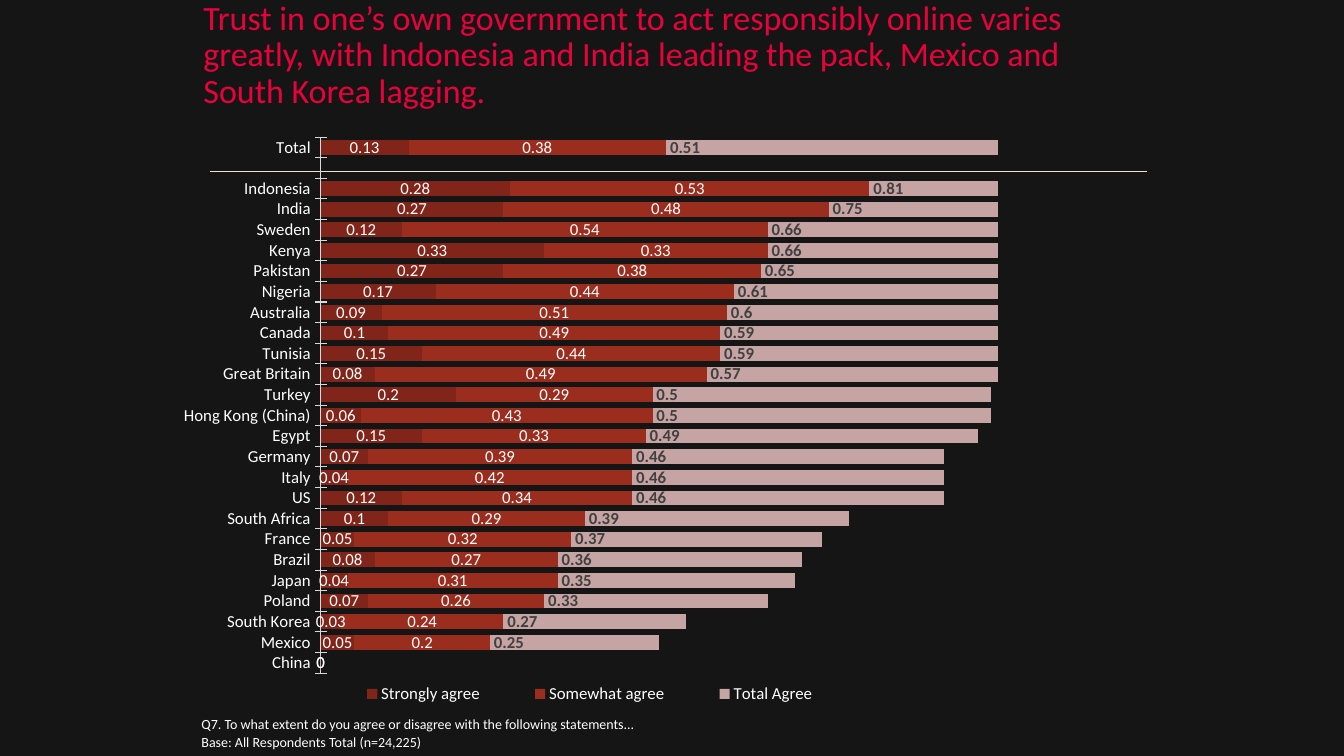
from dataclasses import dataclass

from lxml import etree
from pptx import Presentation
from pptx.chart.data import CategoryChartData
from pptx.dml.color import RGBColor
from pptx.enum.chart import (XL_CHART_TYPE, XL_LABEL_POSITION, XL_LEGEND_POSITION,
                             XL_TICK_LABEL_POSITION, XL_TICK_MARK)
from pptx.enum.shapes import MSO_CONNECTOR
from pptx.enum.text import MSO_ANCHOR
from pptx.oxml.ns import qn
from pptx.util import Inches, Pt

BAR_STACKED = XL_CHART_TYPE.BAR_STACKED
INSIDE_BASE = XL_LABEL_POSITION.INSIDE_BASE
LEGEND_BOTTOM = XL_LEGEND_POSITION.BOTTOM
LABELS_LOW = XL_TICK_LABEL_POSITION.LOW
CROSS, NO_TICK = XL_TICK_MARK.CROSS, XL_TICK_MARK.NONE
STRAIGHT = MSO_CONNECTOR.STRAIGHT
BOTTOM, MIDDLE = MSO_ANCHOR.BOTTOM, MSO_ANCHOR.MIDDLE

TITLE = ("Trust in one’s own government to act responsibly online varies greatly, "
         "with Indonesia and India leading the pack, Mexico and South Korea lagging.")
FOOTNOTES = [
    "Q7. To what extent do you agree or disagree with the following statements...",
    "Base: All Respondents Total (n=24,225)",
]
SERIES = ["Strongly agree", "Somewhat agree", "Total Agree"]
TRUST = [
    ("Total", 0.13, 0.38, 0.51),
    ("", None, None, None),
    ("Indonesia", 0.28, 0.53, 0.81),
    ("India", 0.27, 0.48, 0.75),
    ("Sweden", 0.12, 0.54, 0.66),
    ("Kenya", 0.33, 0.33, 0.66),
    ("Pakistan", 0.27, 0.38, 0.65),
    ("Nigeria", 0.17, 0.44, 0.61),
    ("Australia", 0.09, 0.51, 0.6),
    ("Canada", 0.1, 0.49, 0.59),
    ("Tunisia", 0.15, 0.44, 0.59),
    ("Great Britain", 0.08, 0.49, 0.57),
    ("Turkey", 0.2, 0.29, 0.5),
    ("Hong Kong (China)", 0.06, 0.43, 0.5),
    ("Egypt", 0.15, 0.33, 0.49),
    ("Germany", 0.07, 0.39, 0.46),
    ("Italy", 0.04, 0.42, 0.46),
    ("US", 0.12, 0.34, 0.46),
    ("South Africa", 0.1, 0.29, 0.39),
    ("France", 0.05, 0.32, 0.37),
    ("Brazil", 0.08, 0.27, 0.36),
    ("Japan", 0.04, 0.31, 0.35),
    ("Poland", 0.07, 0.26, 0.33),
    ("South Korea", 0.03, 0.24, 0.27),
    ("Mexico", 0.05, 0.2, 0.25),
    ("China", 0, 0, 0),
]

TITLE_BOX = (1.92, 0.25, 9.46, 0.61)
FOOTNOTE_BOX = (1.9, 7.05, 7.94, 0.45)
CHART_BOX = (1.66, 1.25, 8.4, 5.9)
PLOT_BOX = (3.18, 1.36, 6.72, 5.32)
LEGEND_BOX = (3.15, 6.76, 5.4, 0.25)
RULE_LEFT, RULE_RIGHT, RULE_Y = 2.08, 11.38, 1.7


@dataclass(frozen=True)
class Theme:
    font: str = "Calibri"
    background: str = "151515"
    title: str = "E6023B"
    text: str = "FFFFFF"
    total_label: str = "404040"
    rule: str = "E9E5DC"
    axis: str = "D9D9D9"
    bars: tuple = ("81251A", "9B2D1F", "C6A4A3")
    title_size: float = 24.3
    chart_size: float = 12
    footnote_size: float = 10


THEME = Theme()


def rgb(color):
    return RGBColor.from_string(color)


def style_font(font, size, color, bold=False):
    font.name, font.size, font.bold = THEME.font, Pt(size), bold
    font.color.rgb = rgb(color)


def add_text(s, box, lines, size, color, anchor, line_spacing, space_before=0):
    tf = s.shapes.add_textbox(*map(Inches, box)).text_frame
    tf.word_wrap = True
    tf.vertical_anchor = anchor
    for i, line in enumerate(lines):
        p = tf.paragraphs[0] if i == 0 else tf.add_paragraph()
        p.line_spacing, p.space_before = line_spacing, Pt(space_before)
        r = p.add_run()
        r.text = line
        style_font(r.font, size, color)


def place_in_chart(parent, index, box, inner=False):
    """Fix the position of a chart part, given in slide inches."""
    old = parent.find(qn("c:layout"))
    if old is not None:
        parent.remove(old)
    layout = etree.Element(qn("c:layout"))
    manual = etree.SubElement(layout, qn("c:manualLayout"))
    left, top, width, height = CHART_BOX
    settings = [("layoutTarget", "inner")] if inner else []
    settings += [("xMode", "edge"), ("yMode", "edge"),
                 ("x", (box[0] - left) / width), ("y", (box[1] - top) / height),
                 ("w", box[2] / width), ("h", box[3] / height)]
    for tag, value in settings:
        etree.SubElement(manual, qn("c:" + tag)).set("val", str(value))
    parent.insert(index, layout)


def hide_label(labels, index):
    label = etree.Element(qn("c:dLbl"))
    etree.SubElement(label, qn("c:idx")).set("val", str(index))
    etree.SubElement(label, qn("c:delete")).set("val", "1")
    labels._element.insert(0, label)


def add_trust_chart(s):
    countries, *columns = zip(*TRUST)
    data = CategoryChartData()
    data.categories = countries
    for name, values in zip(SERIES, columns):
        data.add_series(name, values)
    chart = s.shapes.add_chart(BAR_STACKED, *map(Inches, CHART_BOX), data).chart
    chart.has_title = False
    style_font(chart.font, THEME.chart_size, THEME.text)

    axis = chart.category_axis
    axis.reverse_order = True
    axis.major_tick_mark, axis.minor_tick_mark = CROSS, NO_TICK
    axis.tick_label_position = LABELS_LOW
    axis.format.line.color.rgb = rgb(THEME.axis)
    axis.format.line.width = Pt(0.75)
    style_font(axis.tick_labels.font, THEME.chart_size, THEME.text)

    scale = chart.value_axis
    scale.minimum_scale, scale.maximum_scale = 0, 1
    scale.has_major_gridlines = False
    scale.visible = False

    plot = chart.plots[0]
    plot.gap_width, plot.overlap = 40, 100
    plot.vary_by_categories = False
    for series, color in zip(plot.series, THEME.bars):
        series.format.fill.solid()
        series.format.fill.fore_color.rgb = rgb(color)
        labels = series.data_labels
        labels.show_value = True
        is_total = series.name == SERIES[-1]
        style_font(labels.font, THEME.chart_size,
                   THEME.total_label if is_total else THEME.text, is_total)
        if is_total:
            labels.position = INSIDE_BASE
            hide_label(labels, countries.index("China"))

    chart.has_legend = True
    legend = chart.legend
    legend.position = LEGEND_BOTTOM
    legend.include_in_layout = False
    style_font(legend.font, THEME.chart_size, THEME.text)
    place_in_chart(legend._element, 1, LEGEND_BOX)
    place_in_chart(plot._element.getparent(), 0, PLOT_BOX, inner=True)


def add_rule(s):
    y = Inches(RULE_Y)
    rule = s.shapes.add_connector(STRAIGHT, Inches(RULE_LEFT), y, Inches(RULE_RIGHT), y)
    rule.line.color.rgb = rgb(THEME.rule)
    rule.line.width = Pt(1)
    etree.SubElement(rule._element.spPr, qn("a:effectLst"))


def main():
    prs = Presentation()
    prs.slide_width, prs.slide_height = Inches(13.33), Inches(7.5)
    s = prs.slides.add_slide(prs.slide_layouts[6])
    s.background.fill.solid()
    s.background.fill.fore_color.rgb = rgb(THEME.background)
    add_text(s, FOOTNOTE_BOX, FOOTNOTES, THEME.footnote_size, THEME.text, BOTTOM, 0.95, 2)
    add_text(s, TITLE_BOX, [TITLE], THEME.title_size, THEME.title, MIDDLE, 0.9)
    add_rule(s)
    add_trust_chart(s)
    prs.save("out.pptx")


if __name__ == "__main__":
    main()
